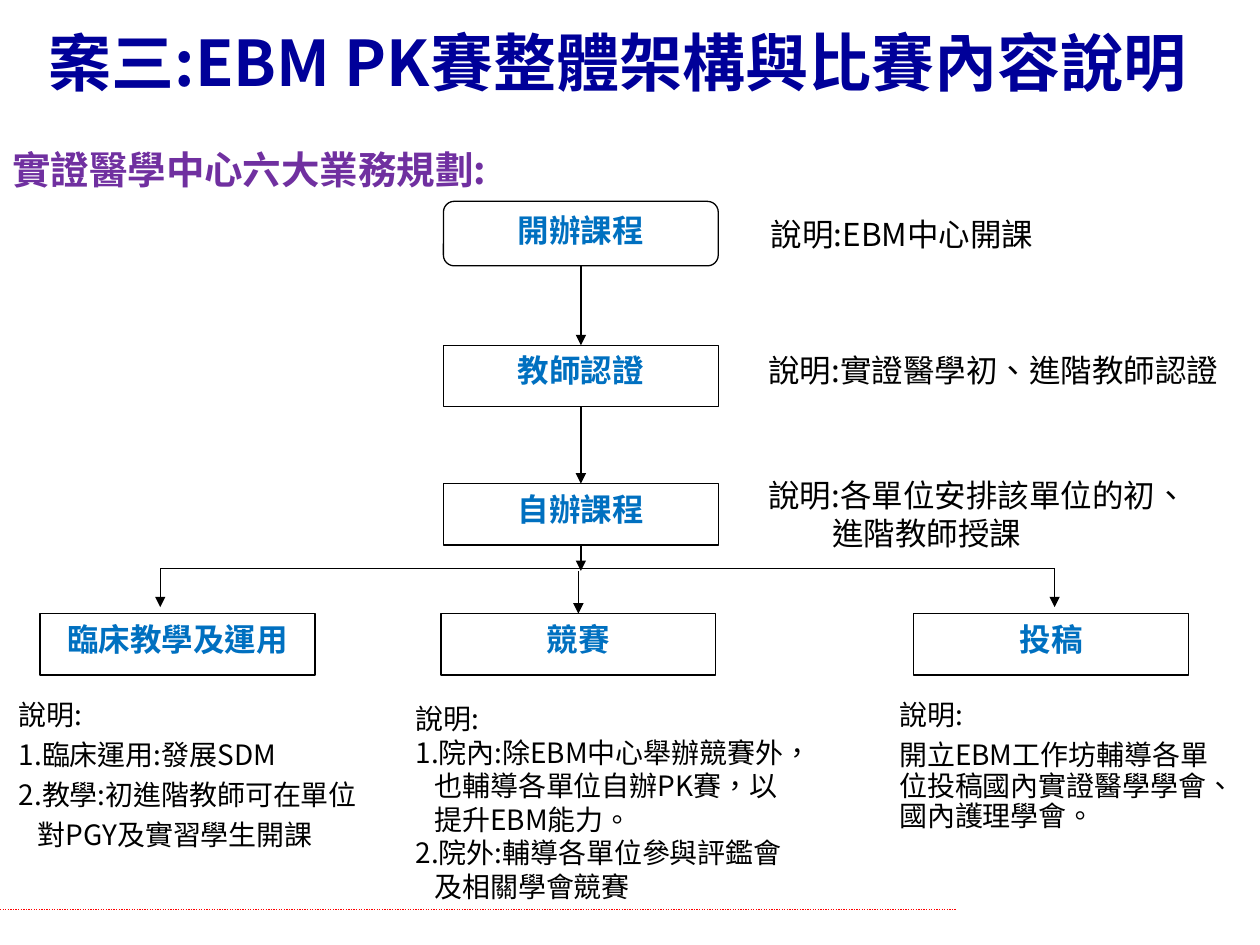
from dataclasses import dataclass
from typing import Any

import pptx
import pptx.dml.color
import pptx.enum.dml
import pptx.enum.lang
import pptx.enum.shapes
import pptx.enum.text
import pptx.oxml.ns
import pptx.util
from lxml import etree

Cm, Pt = pptx.util.Cm, pptx.util.Pt
SHAPES = pptx.enum.shapes.MSO_SHAPE
ALIGN = pptx.enum.text.PP_ALIGN
ANCHOR = pptx.enum.text.MSO_ANCHOR
FIT = pptx.enum.text.MSO_AUTO_SIZE
qn = pptx.oxml.ns.qn

FONT = "Noto Sans CJK SC"
LANGUAGE = "zh-TW"
BLACK, RED, BLUE, NAVY, PURPLE = "000000", "FF0000", "0070C0", "000099", "7030A0"
TOP, BOTTOM = 0, 2
BOX_WIDTH, BOX_HEIGHT = 5.54, 1.24
BRANCH_TOP, BUS_Y = 12.37, 11.46


@dataclass
class Step:
    text: str
    left: float
    top: float
    height: float = BOX_HEIGHT
    preset: Any = SHAPES.RECTANGLE


@dataclass
class Line:
    """Paragraph with an optional left margin in centimetres."""
    text: str
    margin: float = 0


@dataclass
class Note:
    left: float
    top: float
    width: float
    height: float
    lines: list[Line]
    size: float = 18
    color: str = BLACK
    bold: bool = False
    spacing: dict[str, Any] | None = None


COURSE = Step("開辦課程", 8.94, 4.06, 1.3, SHAPES.ROUNDED_RECTANGLE)
CERTIFY = Step("教師認證", 8.94, 6.96)
OWN_COURSE = Step("自辦課程", 8.94, 9.75)
CLINICAL = Step("臨床教學及運用", 0.81, BRANCH_TOP)
CONTEST = Step("競賽", 8.89, BRANCH_TOP)
PAPER = Step("投稿", 18.42, BRANCH_TOP)

LOOSE = {"line_spacing": 0.9, "space_after": Pt(5.6)}
NOTES = [
    Note(0, 2.82, 14.07, 1.19, [Line("實證醫學中心六大業務規劃:")], 22, PURPLE, True),
    Note(15.29, 4.22, 6.43, 1.02, [Line("說明:EBM中心開課")]),
    Note(15.24, 6.96, 9.65, 1.02, [Line("說明:實證醫學初、進階教師認證")]),
    Note(15.24, 9.47, 9.4, 1.8,
         [Line("說明:各單位安排該單位的初、"), Line("進階教師授課", 1.29)]),
    Note(0.13, 14.02, 7.59, 3.43,
         [Line("說明:"), Line("1.臨床運用:發展SDM"),
          Line("2.教學:初進階教師可在單位"), Line("對PGY及實習學生開課", 0.38)],
         16, spacing=LOOSE),
    Note(8.13, 14.02, 8.5, 4.37,
         [Line("說明:"), Line("1.院內:除EBM中心舉辦競賽外，"),
          Line("也輔導各單位自辦PK賽，以", 0.38), Line("提升EBM能力。", 0.38),
          Line("2.院外:輔導各單位參與評鑑會"), Line("及相關學會競賽", 0.38)], 16),
    Note(17.88, 14.02, 6.99, 2.95,
         [Line("說明:"), Line("開立EBM工作坊輔導各單位投稿國內實證醫學學會、國內護理學會。")],
         16, spacing=LOOSE),
]


def rgb(color: str) -> pptx.dml.color.RGBColor:
    return pptx.dml.color.RGBColor.from_string(color)


def apply(target: Any, values: dict[str, Any]) -> None:
    for name, value in values.items():
        setattr(target, name, value)


def write(paragraph: Any, text: str, size: float, color: str, bold: bool) -> None:
    run = paragraph.add_run()
    run.text = text
    apply(run.font, {"name": FONT, "size": Pt(size), "bold": bold})
    run.font.color.rgb = rgb(color)
    # The language selects the centred Traditional Chinese punctuation
    run.font._element.set("lang", LANGUAGE)
    # East Asian glyphs take their font from a separate element
    east_asian = etree.SubElement(run.font._element, qn("a:ea"))
    east_asian.set("typeface", FONT)


def add_step(slide: Any, step: Step) -> Any:
    shape = slide.shapes.add_shape(step.preset, Cm(step.left), Cm(step.top),
                                   Cm(BOX_WIDTH), Cm(step.height))
    shape.shadow.inherit = False
    shape.fill.background()
    shape.line.color.rgb = rgb(BLACK)
    shape.line.width = Pt(0.75)
    shape.text_frame.vertical_anchor = ANCHOR.TOP
    paragraph = shape.text_frame.paragraphs[0]
    paragraph.alignment = ALIGN.CENTER
    write(paragraph, step.text, 18, BLUE, True)
    return shape


def add_note(slide: Any, note: Note) -> Any:
    box = slide.shapes.add_textbox(Cm(note.left), Cm(note.top),
                                   Cm(note.width), Cm(note.height))
    frame = box.text_frame
    apply(frame, {"word_wrap": True, "auto_size": FIT.SHAPE_TO_FIT_TEXT})
    for index, line in enumerate(note.lines):
        paragraph = frame.add_paragraph() if index else frame.paragraphs[0]
        apply(paragraph, note.spacing or {})
        if line.margin:
            paragraph._p.get_or_add_pPr().set("marL", str(Cm(line.margin)))
        write(paragraph, line.text, note.size, note.color, note.bold)
    return box


def add_line(slide: Any, start: tuple[float, float], end: tuple[float, float],
             color: str = BLACK, arrow: bool = True) -> Any:
    connector = slide.shapes.add_connector(
        pptx.enum.shapes.MSO_CONNECTOR.STRAIGHT,
        Cm(start[0]), Cm(start[1]), Cm(end[0]), Cm(end[1]))
    connector.line.color.rgb = rgb(color)
    connector.line.width = Pt(0.75)
    if arrow:
        head = etree.SubElement(connector.line._get_or_add_ln(), qn("a:tailEnd"))
        head.set("type", "triangle")
    etree.SubElement(connector._element.spPr, qn("a:effectLst"))
    return connector


def middle(step: Step) -> float:
    return step.left + BOX_WIDTH / 2


def main() -> None:
    presentation = pptx.Presentation()
    apply(presentation, {"slide_width": Cm(25.4), "slide_height": Cm(19.05)})
    slide = presentation.slides.add_slide(presentation.slide_layouts[6])

    # Dotted footer rule
    rule = add_line(slide, (0, 18.34), (19.28, 18.34), RED, arrow=False)
    rule.line.dash_style = pptx.enum.dml.MSO_LINE.ROUND_DOT

    # Title
    title = add_note(slide, Note(0, 0.18, 24.89, 2.13,
                                 [Line("案三:EBM PK賽整體架構與比賽內容說明")], 36, NAVY, True))
    apply(title.text_frame, {"auto_size": FIT.NONE, "vertical_anchor": ANCHOR.MIDDLE})
    title.text_frame.paragraphs[0].alignment = ALIGN.CENTER

    # Explanations
    for note in NOTES:
        add_note(slide, note)

    # Steps, joined from top to bottom
    chain = [COURSE, CERTIFY, OWN_COURSE]
    chain_shapes = [add_step(slide, step) for step in chain]
    for upper, lower in zip(chain_shapes, chain_shapes[1:]):
        connector = add_line(slide, (0, 0), (1, 1))
        connector.begin_connect(upper, BOTTOM)
        connector.end_connect(lower, TOP)

    # Branches
    add_step(slide, CLINICAL)
    contest = add_step(slide, CONTEST)
    add_step(slide, PAPER)
    left, right = 3.23, 21.26
    add_line(slide, (left, BUS_Y), (right, BUS_Y), arrow=False)
    for x in (left, right):
        add_line(slide, (x, BUS_Y), (x, 12.24))
    stub = add_line(slide, (middle(OWN_COURSE), 11), (middle(OWN_COURSE), 11.51))
    stub.begin_connect(chain_shapes[-1], BOTTOM)
    drop = add_line(slide, (middle(CONTEST), 11.51), (middle(CONTEST), BRANCH_TOP))
    drop.end_connect(contest, TOP)

    presentation.save("out.pptx")


if __name__ == "__main__":
    main()
